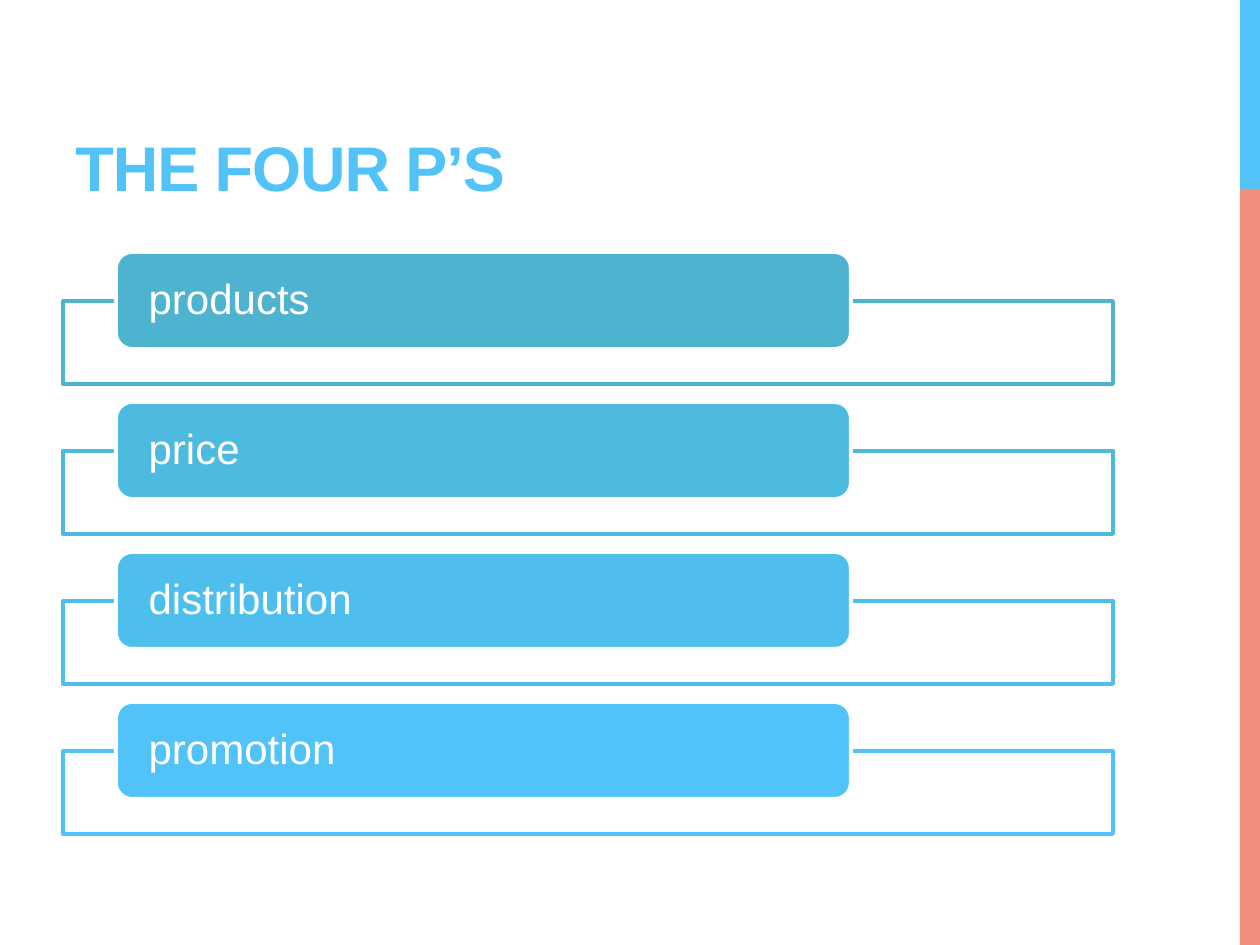
from dataclasses import dataclass

import pptx
import pptx.dml.color
import pptx.enum.shapes
import pptx.enum.text
import pptx.oxml
import pptx.oxml.ns
import pptx.util

PX = 914400 // 126
SHAPES = pptx.enum.shapes.MSO_SHAPE
ANCHORS = pptx.enum.text.MSO_ANCHOR
FONT = "Arial"
WHITE = "FFFFFF"
SKY = "51C3F9"
CORAL = "EF8E7B"
ROW_STEP = 150


@dataclass(frozen=True)
class Box:
    left: int
    top: int
    width: int
    height: int

    def emu(self) -> list[int]:
        return [n * PX for n in (self.left, self.top, self.width, self.height)]

    def down(self, distance: int) -> "Box":
        return Box(self.left, self.top + distance, self.width, self.height)


@dataclass(frozen=True)
class MarketingP:
    name: str
    color: str


FRAME = Box(63, 301, 1050, 83)
LABEL = Box(116, 252, 735, 97)
MARKETING_PS = [
    MarketingP("products", "4EB3CF"),
    MarketingP("price", "4DBADF"),
    MarketingP("distribution", "4EBFED"),
    MarketingP("promotion", SKY),
]


def rgb(color: str) -> pptx.dml.color.RGBColor:
    return pptx.dml.color.RGBColor.from_string(color)


def draw_shape(slide, kind, box: Box, fill: str, line: str | None = None):
    shape = slide.shapes.add_shape(kind, *box.emu())
    shape.shadow.inherit = False
    shape.fill.solid()
    shape.fill.fore_color.rgb = rgb(fill)
    if line:
        shape.line.color.rgb = rgb(line)
        shape.line.width = pptx.util.Pt(2.25)
    else:
        shape.line.fill.background()
    return shape


def set_opacity(shape, percent: int) -> None:
    color = shape.fill._xPr.find(".//" + pptx.oxml.ns.qn("a:srgbClr"))
    alpha = pptx.oxml.parse_xml(
        f'<a:alpha {pptx.oxml.ns.nsdecls("a")} val="{percent * 1000}"/>'
    )
    color.append(alpha)


def write(shape, text: str, size: int, color: str, anchor, bold: bool = False):
    frame = shape.text_frame
    frame.word_wrap = True
    frame.vertical_anchor = anchor
    paragraph = frame.paragraphs[0]
    paragraph.alignment = pptx.enum.text.PP_ALIGN.LEFT
    run = paragraph.add_run()
    run.text = text
    paragraph.font.name = FONT
    paragraph.font.size = pptx.util.Pt(size)
    paragraph.font.bold = bold
    paragraph.font.color.rgb = rgb(color)
    return paragraph


def draw_title(slide) -> None:
    title = slide.shapes.add_textbox(*Box(63, 21, 798, 189).emu())
    paragraph = write(title, "THE FOUR P’S", 36, SKY, ANCHORS.BOTTOM, bold=True)
    paragraph.runs[0]._r.get_or_add_rPr().set("spc", "-60")


def draw_row(slide, item: MarketingP, offset: int) -> None:
    frame = draw_shape(
        slide, SHAPES.RECTANGLE, FRAME.down(offset), WHITE, item.color
    )
    set_opacity(frame, 90)
    label = draw_shape(
        slide, SHAPES.ROUNDED_RECTANGLE, LABEL.down(offset), item.color, WHITE
    )
    text = label.text_frame
    text.margin_left = text.margin_right = 28 * PX
    text.margin_top = text.margin_bottom = 0
    paragraph = write(label, item.name, 24, WHITE, ANCHORS.MIDDLE)
    paragraph.line_spacing = 0.9


def main() -> None:
    deck = pptx.Presentation()
    deck.slide_width = 1260 * PX
    deck.slide_height = 945 * PX
    slide = deck.slides.add_slide(deck.slide_layouts[6])
    draw_shape(slide, SHAPES.RECTANGLE, Box(1240, 0, 20, 189), SKY)
    draw_shape(slide, SHAPES.RECTANGLE, Box(1240, 189, 20, 756), CORAL)
    draw_title(slide)
    for index, item in enumerate(MARKETING_PS):
        draw_row(slide, item, index * ROW_STEP)
    deck.save("out.pptx")


if __name__ == "__main__":
    main()
